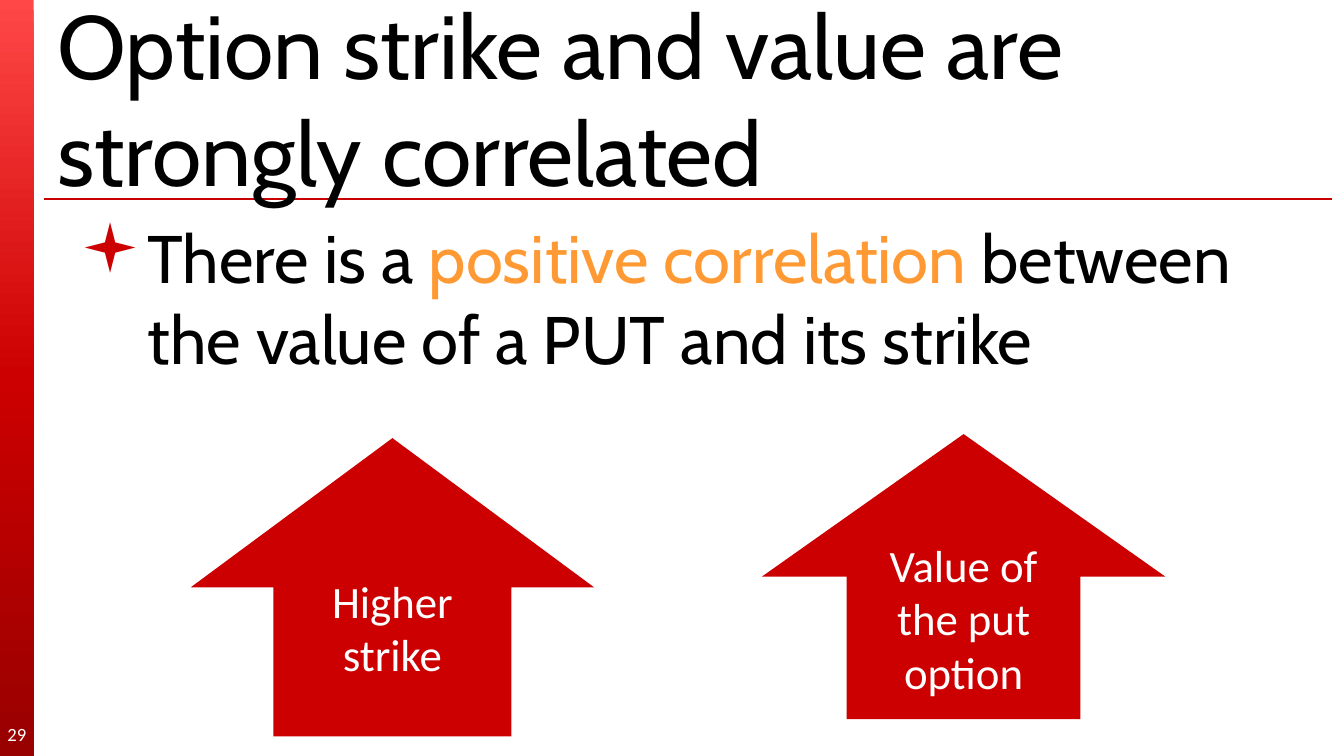
from copy import deepcopy

from lxml import etree
from pptx import Presentation
from pptx import util as u
from pptx.dml.color import RGBColor
from pptx.enum import shapes, text
from pptx.oxml.ns import qn

RED = RGBColor(0xCC, 0x00, 0x00)
LIGHT_RED = RGBColor(0xFF, 0x47, 0x47)
DARK_RED = RGBColor(0x99, 0x00, 0x00)
RULE_RED = RGBColor(0xC8, 0x00, 0x00)
ORANGE = RGBColor(0xFF, 0x99, 0x33)
BLACK = RGBColor(0x00, 0x00, 0x00)
WHITE = RGBColor(0xFF, 0xFF, 0xFF)

# Widescreen, 16:9
WIDTH = 10
HEIGHT = WIDTH * 9 / 16


def inches(box):
    return [u.Inches(value) for value in box]


def write(frame, paragraphs, font="Calibri", size=24, align=None,
          anchor=text.MSO_ANCHOR.TOP, margin=None):
    """Fill a frame; each paragraph is a list of (words, colour) spans."""
    frame.word_wrap = True
    frame.vertical_anchor = anchor
    if margin is not None:
        frame.margin_left = frame.margin_right = u.Inches(margin)
        frame.margin_top = frame.margin_bottom = u.Inches(margin)
    for index, spans in enumerate(paragraphs):
        para = frame.add_paragraph() if index else frame.paragraphs[0]
        para.alignment = align
        for words, colour in spans:
            span = para.add_run()
            span.text = words
            span.font.name = font
            span.font.size = u.Pt(size)
            span.font.color.rgb = colour


def add_block(page, kind, box, colour=RED):
    block = page.shapes.add_shape(kind, *inches(box))
    block.shadow.inherit = False
    block.line.fill.background()
    block.fill.solid()
    block.fill.fore_color.rgb = colour
    return block


def add_side_bar(page, box, number):
    left, top, width, height = box
    bar = add_block(page, shapes.MSO_SHAPE.RECTANGLE, box)
    bar.fill.gradient()
    bar.fill.gradient_angle = 270
    # A new gradient has two stops: add a third
    first = bar.fill._fill._gradFill.find(qn("a:gsLst"))[0]
    first.addnext(deepcopy(first))
    stops = zip(bar.fill.gradient_stops, (0, 0.5, 1), (LIGHT_RED, RED, DARK_RED))
    for stop, position, colour in stops:
        stop.position = position
        stop.color.rgb = colour
    # Page number
    label = page.shapes.add_textbox(*inches((left, top + height - 0.31, width, 0.3)))
    write(label.text_frame, [[(number, WHITE)]], size=10, margin=0,
          align=text.PP_ALIGN.CENTER, anchor=text.MSO_ANCHOR.MIDDLE)


def add_title(page, box, words):
    left, top, width, height = box
    # Rule under the title
    y = top + height + 0.09
    rule = page.shapes.add_connector(
        shapes.MSO_CONNECTOR.STRAIGHT, *inches((left, y, left + width, y)))
    rule.line.color.rgb = RULE_RED
    rule.line.width = u.Pt(0.75)
    etree.SubElement(rule._element.spPr, qn("a:effectLst"))
    title = add_block(page, shapes.MSO_SHAPE.RECTANGLE, box, WHITE)
    write(title.text_frame, [[(words, BLACK)]], font="Cabin", size=48,
          align=text.PP_ALIGN.LEFT, anchor=text.MSO_ANCHOR.MIDDLE)


def add_body(page, box, spans):
    body = page.shapes.add_textbox(*inches(box))
    properties = body.text_frame.paragraphs[0]._p.get_or_add_pPr()
    indent = u.Inches(0.5)
    properties.set("marL", str(indent))
    properties.set("indent", str(-indent))
    colour = etree.SubElement(properties, qn("a:buClr"))
    etree.SubElement(colour, qn("a:srgbClr"), val=str(RED))
    etree.SubElement(properties, qn("a:buFont"), typeface="Wingdings")
    etree.SubElement(properties, qn("a:buChar"), char="▪")
    write(body.text_frame, [spans], font="Cabin", size=36)


def add_up_arrow(page, box, lines, shaft, label_box=None):
    """Draw an up arrow; label_box, relative to it, holds the text if given."""
    left, top = box[:2]
    arrow = add_block(page, shapes.MSO_SHAPE.UP_ARROW, box)
    arrow.adjustments[0] = shaft
    arrow.adjustments[1] = 0.5
    holder = arrow
    if label_box:
        x, y, width, height = label_box
        holder = add_block(page, shapes.MSO_SHAPE.RECTANGLE,
                           (left + x, top + y, width, height))
    write(holder.text_frame, [[(line, WHITE)] for line in lines],
          align=text.PP_ALIGN.CENTER, anchor=text.MSO_ANCHOR.MIDDLE)


def main():
    deck = Presentation()
    deck.slide_width, deck.slide_height = inches((WIDTH, HEIGHT))
    page = deck.slides.add_slide(deck.slide_layouts[6])

    add_side_bar(page, (0, 0, 0.25, HEIGHT), "29")
    add_title(page, (0.33, 0.06, 9.58, 1.33),
              "Option strike and value are strongly correlated")
    add_body(page, (0.5, 1.56, 9.33, 4.06), [
        ("There is a ", BLACK),
        ("positive correlation ", ORANGE),
        ("between the value of a PUT and its strike", BLACK),
    ])
    # Strike and value rise together
    add_up_arrow(page, (5.67, 3.23, 3, 2.12), ["Value of the put option"], 0.58)
    add_up_arrow(page, (1.42, 3.26, 3, 2.22), ["Higher", "strike"], 0.59,
                 label_box=(0.71, 0.85, 1.58, 1.11))

    deck.save("out.pptx")


if __name__ == "__main__":
    main()
